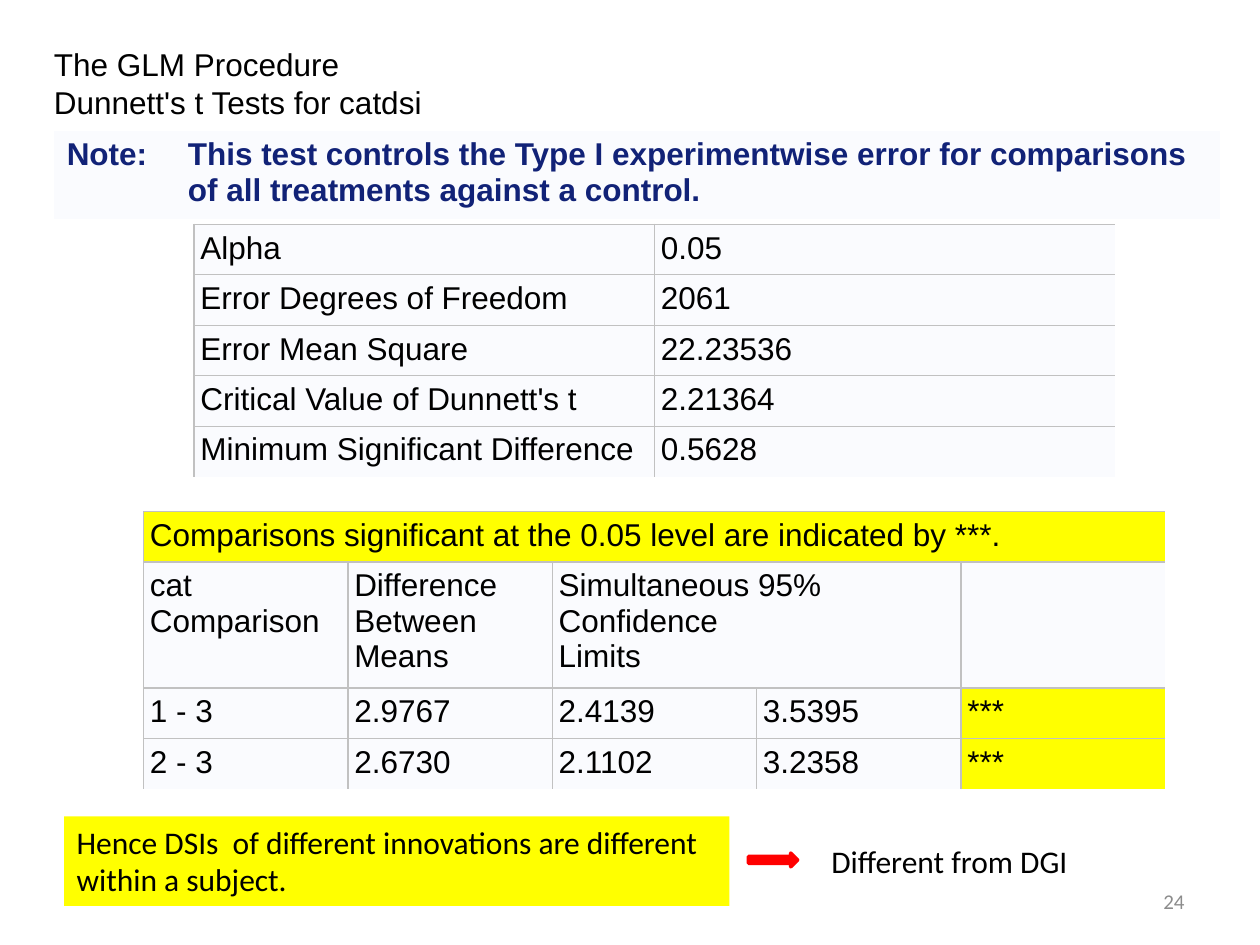
from dataclasses import dataclass
from lxml.etree import SubElement
from pptx import Presentation
from pptx.dml.color import RGBColor
from pptx.enum.shapes import MSO_SHAPE
from pptx.enum.text import MSO_ANCHOR, PP_ALIGN
from pptx.oxml.ns import qn
from pptx.util import Inches, Pt


@dataclass(frozen=True)
class Theme:
    ink: str = "000000"
    navy: str = "112277"
    pale: str = "FAFBFE"
    mark: str = "FFFF00"
    rule: str = "C1C1C1"
    red: str = "FF0000"
    gray: str = "8C8C8C"
    sans: str = "Arial"
    body: str = "Calibri"
    size: int = 18
    small: int = 12
    hair: float = 0.75


THEME = Theme()
COLS, ROWS = 100, 75
WIDE, HIGH = Inches(10), Inches(7.5)


def grid(col, row, wide, high):
    """Turn grid columns and rows into left, top, width and height."""
    x, y = WIDE / COLS, HIGH / ROWS
    return [int(n) for n in (col * x, row * y, wide * x, high * y)]


def paint(item, color):
    item.fill.solid()
    item.fill.fore_color.rgb = RGBColor.from_string(color)


def style(frame, face, color=THEME.ink, size=THEME.size, bold=False):
    for par in frame.paragraphs:
        for run in par.runs:
            font = run.font
            font.name, font.size, font.bold = face, Pt(size), bold
            font.color.rgb = RGBColor.from_string(color)


def label(slide, box, text, face=THEME.body, fill=None, **look):
    shape = slide.shapes.add_textbox(*box)
    frame = shape.text_frame
    frame.word_wrap = True
    frame.text = text
    style(frame, face, **look)
    if fill:
        paint(shape, fill)
    return frame


def border(cell, sides):
    """Rule the named sides (L, R, T, B) and clear the others."""
    props = cell._tc.get_or_add_tcPr()
    for spot, side in enumerate("LRTB"):
        line = SubElement(props, qn(f"a:ln{side}"), w=str(Pt(THEME.hair)))
        if side in sides:
            fill = SubElement(line, qn("a:solidFill"))
            SubElement(fill, qn("a:srgbClr"), val=THEME.rule)
        else:
            SubElement(line, qn("a:noFill"))
        props.insert(spot, line)


def table(slide, box, data, widths, heights, spans=(), marks=(),
          ruled=True, **look):
    """Fill the box with a table; widths and heights are relative shares."""
    rows, cols = len(data), len(widths)
    grid_ = slide.shapes.add_table(rows, cols, *box).table
    grid_.first_row = grid_.horz_banding = False
    for col, part in zip(grid_.columns, widths):
        col.width = int(box[2] * part / sum(widths))
    for row, part in zip(grid_.rows, heights):
        row.height = int(box[3] * part / sum(heights))
    for r, first, last in spans:
        grid_.cell(r, first).merge(grid_.cell(r, last))
    for r, line in enumerate(data):
        for c, text in enumerate(line):
            cell = grid_.cell(r, c)
            paint(cell, THEME.mark if (r, c) in marks else THEME.pale)
            if ruled:
                cell.margin_left = cell.margin_right = Inches(0.05)
                end = c + (cell.span_width if cell.is_merge_origin else 1)
                border(cell, "LT" + "R" * (end < cols) + "B" * (r < rows - 1))
            else:
                border(cell, "")
            if cell.is_spanned:
                continue
            cell.text_frame.text = text
            style(cell.text_frame, THEME.sans, **look)
            if not text:
                cell.text_frame.paragraphs[0].font.size = Pt(THEME.size)


def note(slide, box):
    text = ("This test controls the Type I experimentwise error "
            "for comparisons of all treatments against a control.")
    table(slide, box, [["Note:", text]], [0.96, 8.28], [1],
          ruled=False, color=THEME.navy, bold=True)


def facts(slide, box):
    data = [["Alpha", "0.05"],
            ["Error Degrees of Freedom", "2061"],
            ["Error Mean Square", "22.23536"],
            ["Critical Value of Dunnett's t", "2.21364"],
            ["Minimum Significant Difference", "0.5628"]]
    table(slide, box, data, [1] * 2, [1] * 5)


def tests(slide, box):
    head = "Comparisons significant at the 0.05 level are indicated by ***."
    data = [[head, "", "", "", ""],
            ["cat\vComparison", "Difference\vBetween\vMeans",
             "Simultaneous 95% Confidence\vLimits", "", ""],
            ["1 - 3", "2.9767", "2.4139", "3.5395", "***"],
            ["2 - 3", "2.6730", "2.1102", "3.2358", "***"]]
    table(slide, box, data, [1] * 5, [0.38, 0.95, 0.38, 0.38],
          spans=[(0, 0, 4), (1, 2, 3)], marks=[(0, 0), (2, 4), (3, 4)])


def arrow(slide, box):
    shape = slide.shapes.add_shape(MSO_SHAPE.RIGHT_ARROW, *box)
    shape.shadow.inherit = False
    paint(shape, THEME.red)
    shape.line.color.rgb = RGBColor.from_string(THEME.red)
    shape.line.width = Pt(2)


def page(slide, box):
    frame = label(slide, box, "24", color=THEME.gray, size=THEME.small)
    frame.vertical_anchor = MSO_ANCHOR.MIDDLE
    frame.paragraphs[0].alignment = PP_ALIGN.RIGHT


def main():
    deck = Presentation()
    deck.slide_width, deck.slide_height = WIDE, HIGH
    slide = deck.slides.add_slide(deck.slide_layouts[6])
    page(slide, grid(71.7, 69.5, 23.3, 4))
    note(slide, grid(4.3, 10.4, 92.5, 6.6))
    facts(slide, grid(15.4, 17.8, 73.1, 19.2))
    tests(slide, grid(11.4, 40.6, 81.1, 20.9))
    label(slide, grid(3.3, 3.1, 60, 6.7),
          "The GLM Procedure\nDunnett's t Tests for catdsi", THEME.sans)
    label(slide, grid(5.1, 64.8, 52.8, 7.1),
          "Hence DSIs  of different innovations are different "
          "within a subject.", fill=THEME.mark)
    label(slide, grid(65, 66.3, 23.5, 4), "Different from DGI")
    arrow(slide, grid(59.4, 67.7, 3.9, 1.1))
    deck.save("out.pptx")


if __name__ == "__main__":
    main()
